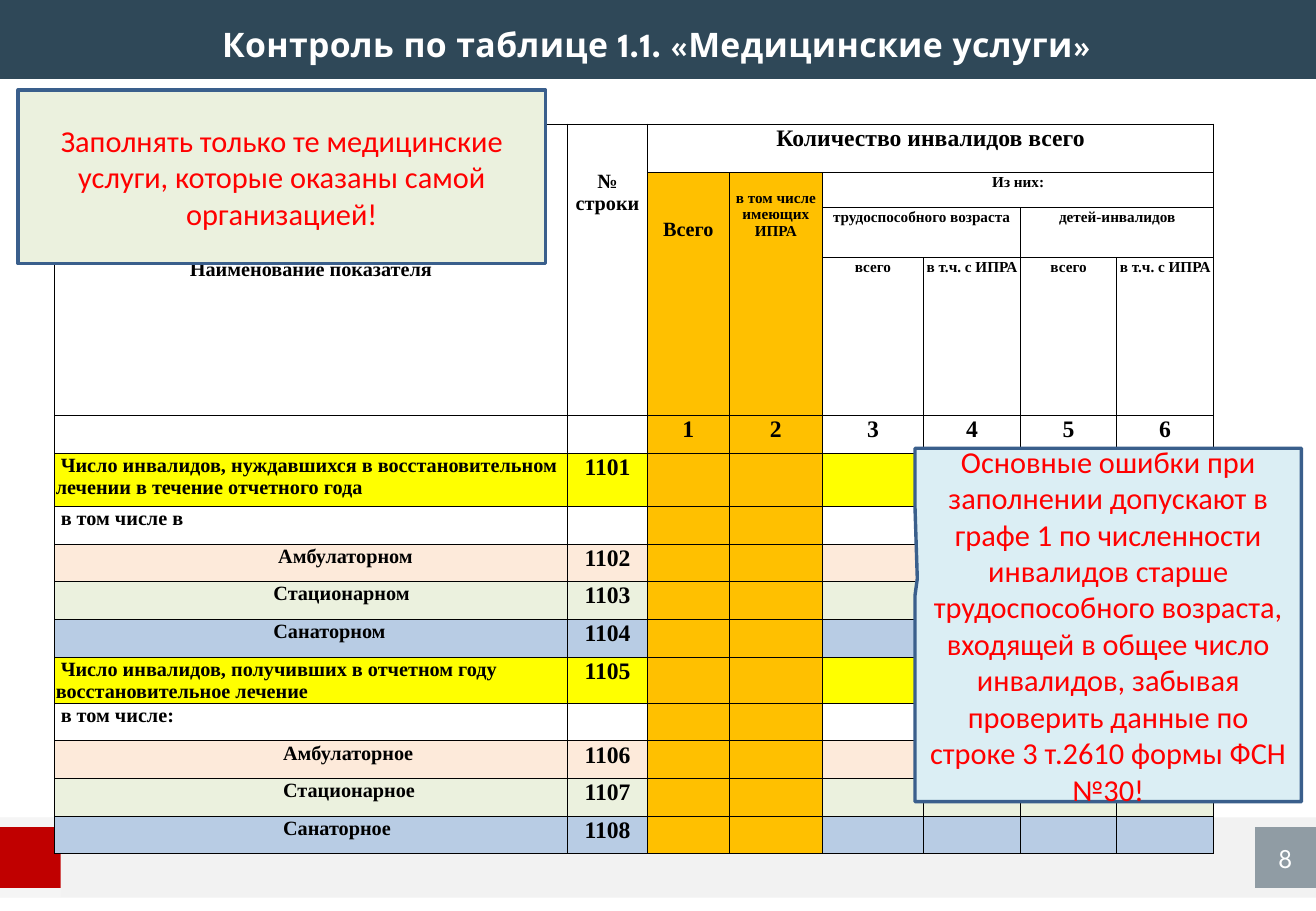
from itertools import accumulate

from lxml.etree import SubElement
from pptx import Presentation
from pptx.dml.color import RGBColor
from pptx.enum.shapes import MSO_SHAPE
from pptx.enum.text import MSO_ANCHOR, PP_ALIGN
from pptx.oxml.ns import qn
from pptx.util import Inches, Pt

# Content
COLORS = {
    "white": "FFFFFF", "black": "000000", "navy": "2F4858", "grey": "F2F2F2",
    "crimson": "C00000", "red": "FF0000", "outline": "3A5F8C", "amber": "FFC000",
    "yellow": "FFFF00", "peach": "FDEADA", "green": "EBF1DE", "blue": "B8CCE4",
    "aqua": "DBEEF4",
}
TITLE = "Контроль по таблице 1.1. «Медицинские услуги»"
PAGE_NUMBER = "8"
NOTE = "Заполнять только те медицинские услуги, которые оказаны самой организацией!"
MISTAKES = ("Основные ошибки при заполнении допускают в графе 1 по численности "
            "инвалидов старше трудоспособного возраста, входящей в общее число "
            "инвалидов, забывая проверить данные по строке 3 т.2610 формы ФСН №30!")

# Heading cells: row, column, rows spanned, columns spanned, text, size, top margin
HEADINGS = [
    (0, 0, 4, 1, "Наименование показателя", 12, 1.11),
    (0, 1, 4, 1, "№\vстроки", 12, 0.38),
    (0, 2, 1, 6, "Количество инвалидов всего", 14, 0.01),
    (1, 2, 3, 1, "Всего", 12, 0.38),
    (1, 3, 3, 1, "в том числе имеющих ИПРА", 9, 0.14),
    (1, 4, 1, 4, "Из них:", 9, 0.01),
    (2, 4, 1, 2, "трудоспособного возраста", 9, 0.01),
    (2, 6, 1, 2, "детей-инвалидов", 9, 0.01),
    (3, 4, 1, 1, "всего", 9, 0.01),
    (3, 5, 1, 1, "в т.ч. с ИПРА", 9, 0.01),
    (3, 6, 1, 1, "всего", 9, 0.01),
    (3, 7, 1, 1, "в т.ч. с ИПРА", 9, 0.01),
]
# Indicators: label, row code, fill, first-line indent
INDICATORS = [
    ("Число инвалидов, нуждавшихся в восстановительном лечении в течение отчетного года",
     "1101", "yellow", 0.04),
    ("в том числе в", "", None, 0.04),
    ("Амбулаторном", "1102", "peach", 1.83),
    ("Стационарном", "1103", "green", 1.79),
    ("Санаторном", "1104", "blue", 1.79),
    ("Число инвалидов, получивших в отчетном году восстановительное лечение",
     "1105", "yellow", 0.04),
    ("в том числе:", "", None, 0.04),
    ("Амбулаторное", "1106", "peach", 1.87),
    ("Стационарное", "1107", "green", 1.87),
    ("Санаторное", "1108", "blue", 1.87),
]

# Grid in inches
WIDTH, HEIGHT = 10.83, 7.5
BAR, FOOTER_TOP, FOOTER, SQUARE = 0.65, 6.73, 0.66, 0.5
SQUARE_TOP = FOOTER_TOP + (FOOTER - SQUARE) / 2
TABLE_LEFT, TABLE_TOP = 0.45, 1.02
COLUMNS = [4.22, 0.66, 0.67, 0.77, 0.83, 0.8, 0.79, 0.8]
ROWS = [0.4, 0.29, 0.41, 1.3, 0.31] + [0.44, *[0.31] * 4] + [0.38, *[0.31] * 4]
NUMBER_ROW = 4
AMBER_COLUMNS = (2, 3)


def color(name):
    return RGBColor.from_string(COLORS[name])


def style(para, size, ink, font, bold=False, align=PP_ALIGN.CENTER):
    para.alignment = align
    para.font.size, para.font.name, para.font.bold = Pt(size), font, bold
    para.font.color.rgb = color(ink)


def add_box(kind, left, top, width, height, fill, alpha=None, line=None):
    box = slide.shapes.add_shape(kind, *map(Inches, (left, top, width, height)))
    box.shadow.inherit = False
    box.fill.solid()
    box.fill.fore_color.rgb = color(fill)
    if alpha:
        tint = box._element.spPr.find(qn("a:solidFill"))[0]
        SubElement(tint, qn("a:alpha"), val=str(alpha * 1000))
    if line:
        box.line.color.rgb, box.line.width = color(line), Pt(2)
    else:
        box.line.fill.background()
    return box


def write(box, text, size, ink, font):
    frame = box.text_frame
    frame.word_wrap, frame.vertical_anchor = True, MSO_ANCHOR.MIDDLE
    frame.text = text
    style(frame.paragraphs[0], size, ink, font)


def write_cell(cell, text, size, top=0.01, indent=None):
    cell.text = text
    cell.margin_top = Inches(top)
    para = cell.text_frame.paragraphs[0]
    if indent is not None:
        para._p.get_or_add_pPr().set("indent", str(Inches(indent)))
    style(para, size, "black", "Times New Roman", True,
          PP_ALIGN.CENTER if indent is None else PP_ALIGN.LEFT)


def prepare_cell(cell, fill):
    cell.margin_left = cell.margin_right = Inches(0.01)
    cell.margin_bottom = 0
    properties = cell._tc.get_or_add_tcPr()
    for side in ("lnL", "lnR", "lnT", "lnB"):
        border = SubElement(properties, qn(f"a:{side}"), w=str(Pt(0.5)))
        paint = SubElement(border, qn("a:solidFill"))
        SubElement(paint, qn("a:srgbClr"), val=COLORS["black"])
    if fill:
        cell.fill.solid()
        cell.fill.fore_color.rgb = color(fill)
    else:
        cell.fill.background()
    write_cell(cell, "", 12)


deck = Presentation()
deck.slide_width, deck.slide_height = Inches(WIDTH), Inches(HEIGHT)
slide = deck.slides.add_slide(deck.slide_layouts[5])

# Bars and corner squares
RECT = MSO_SHAPE.RECTANGLE
add_box(RECT, 0, FOOTER_TOP, WIDTH, FOOTER, "grey")
add_box(RECT, 0, 0, WIDTH, BAR, "navy")
add_box(RECT, 0, FOOTER_TOP, SQUARE, FOOTER, "white", alpha=30)
add_box(RECT, 0, SQUARE_TOP, SQUARE, SQUARE, "crimson")
number = add_box(RECT, WIDTH - SQUARE, SQUARE_TOP, SQUARE, SQUARE, "navy", alpha=50)
write(number, PAGE_NUMBER, 16, "white", "League Spartan")

# Title, brought in front of its bar
title = slide.shapes.title
title.left, title.top = Inches(BAR), Inches(0.04)
title.width, title.height = Inches(9.5), Inches(BAR)
write(title, TITLE, 20, "white", "League Spartan")
frame = title.text_frame
frame.margin_left = frame.margin_right = frame.margin_top = frame.margin_bottom = 0
frame.paragraphs[0].font.bold = True
frame.paragraphs[0].runs[0]._r.get_or_add_rPr().set("spc", "20")
slide.shapes._spTree.append(title._element)

# Table grid
table = slide.shapes.add_table(
    len(ROWS), len(COLUMNS), Inches(TABLE_LEFT), Inches(TABLE_TOP),
    Inches(sum(COLUMNS)), Inches(sum(ROWS))).table
table.first_row = table.horz_banding = False
for tracks, sizes, attribute in ((table.columns, COLUMNS, "width"),
                                 (table.rows, ROWS, "height")):
    edges = [Inches(edge) for edge in accumulate(sizes, initial=0)]
    for track, start, end in zip(tracks, edges, edges[1:]):
        setattr(track, attribute, end - start)

row_fills = [None] * (NUMBER_ROW + 1) + [fill for _, _, fill, _ in INDICATORS]
for row, row_fill in enumerate(row_fills):
    for column in range(len(COLUMNS)):
        amber = row > 0 and column in AMBER_COLUMNS
        prepare_cell(table.cell(row, column), "amber" if amber else row_fill)

# Table text
for row, column, down, across, text, size, top in HEADINGS:
    cell = table.cell(row, column)
    if down * across > 1:
        cell.merge(table.cell(row + down - 1, column + across - 1))
    write_cell(cell, text, size, top)
for column in range(2, len(COLUMNS)):
    write_cell(table.cell(NUMBER_ROW, column), str(column - 1), 14)
for row, (label, code, _, indent) in enumerate(INDICATORS, NUMBER_ROW + 1):
    write_cell(table.cell(row, 0), label, 12, indent=indent)
    write_cell(table.cell(row, 1), code, 14)

# Notes over the table
callout = add_box(MSO_SHAPE.RECTANGULAR_CALLOUT, 7.53, 3.69, 3.18, 2.91, "aqua",
                  line="outline")
callout.adjustments[0], callout.adjustments[1] = -0.494, -0.131
write(callout, MISTAKES, 18, "red", "Calibri")
note = add_box(MSO_SHAPE.FLOWCHART_PROCESS, 0.15, 0.74, 4.34, 1.43, "green",
               line="outline")
write(note, NOTE, 18, "red", "Calibri")

deck.save("out.pptx")
